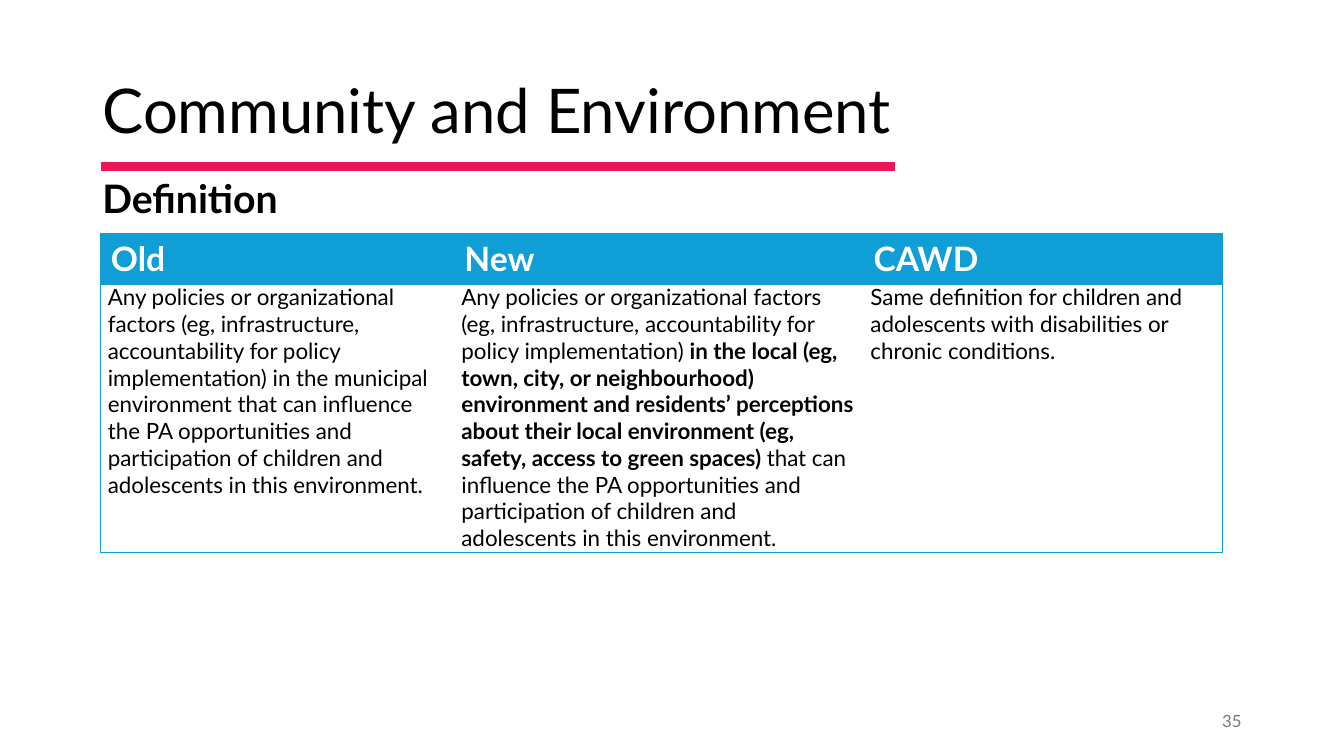
import pptx
import pptx.dml.color
import pptx.enum.shapes
import pptx.enum.text
import pptx.oxml
import pptx.oxml.ns
import pptx.util

COLS, ROWS = 160, 90
WIDE, HIGH = pptx.util.Inches(13.33), pptx.util.Inches(7.5)
HUES = {"ink": "000000", "paper": "FFFFFF", "blue": "0F9ED5", "pink": "EA1656", "gray": "797979"}
ALIGN = pptx.enum.text.PP_ALIGN
MID = pptx.enum.text.MSO_ANCHOR.MIDDLE
TOP = pptx.enum.text.MSO_ANCHOR.TOP

HEADS = ["Old", "New", "CAWD"]
START = "Any policies or organizational factors (eg, infrastructure, accountability for policy implementation) "
END = "that can influence the PA opportunities and participation of children and adolescents in this environment."
BODY = [
    [(START + "in the municipal environment " + END, False)],
    [
        (START, False),
        ("in the local (eg, town, city, or neighbourhood) environment and residents’ perceptions "
         "about their local environment (eg, safety, access to green spaces) ", True),
        (END, False),
    ],
    [("Same definition for children and adolescents with disabilities or chronic conditions.", False)],
]


def across(n):
    return round(WIDE * n / COLS)


def down(n):
    return round(HIGH * n / ROWS)


def place(x, y, w, h):
    return across(x), down(y), across(w), down(h)


def color(name):
    return pptx.dml.color.RGBColor.from_string(HUES[name])


def write(frame, parts, size=16, hue="ink", align=ALIGN.LEFT, anchor=TOP, space=1.0):
    frame.word_wrap = True
    frame.vertical_anchor = anchor
    para = frame.paragraphs[0]
    para.alignment = align
    para.line_spacing = space
    for text, bold in parts:
        run = para.add_run()
        run.text = text
        run.font.name = "Lato"
        run.font.size = pptx.util.Pt(size)
        run.font.bold = bold
        run.font.color.rgb = color(hue)


def label(slide, area, text, bold=False, **style):
    box = slide.shapes.add_textbox(*place(*area))
    write(box.text_frame, [(text, bold)], **style)


def title(slide, area, text, **style):
    head = slide.shapes.title
    head.left, head.top, head.width, head.height = place(*area)
    write(head.text_frame, [(text, False)], **style)


def rule(slide, x, y, end):
    line = slide.shapes.add_connector(
        pptx.enum.shapes.MSO_CONNECTOR.STRAIGHT, across(x), down(y), across(end), down(y))
    line.line.color.rgb = color("pink")
    line.line.width = pptx.util.Pt(6)
    pptx.oxml.ns.qn("a:effectLst")
    line._element.spPr.append(pptx.oxml.parse_xml(
        f'<a:effectLst {pptx.oxml.ns.nsdecls("a")}/>'))


def border(cell, sides):
    props = cell._tc.get_or_add_tcPr()
    for side in "LRTB":
        fill = f'<a:solidFill><a:srgbClr val="{HUES["blue"]}"/></a:solidFill>' if side in sides else "<a:noFill/>"
        props.append(pptx.oxml.parse_xml(
            f'<a:ln{side} {pptx.oxml.ns.nsdecls("a")} w="12700">{fill}</a:ln{side}>'))


def paint(cell, sides, hue):
    border(cell, sides)
    cell.fill.solid()
    cell.fill.fore_color.rgb = color(hue)


def grid(slide, x, y, widths, heights):
    area = place(x, y, sum(widths), sum(heights))
    table = slide.shapes.add_table(len(heights), len(widths), *area).table
    table.horz_banding = False
    for row, high in zip(table.rows, heights):
        row.height = down(high)
    for i, wide in enumerate(widths):
        table.columns[i].width = across(wide)
        edge = {0: "L", len(widths) - 1: "R"}.get(i, "")
        top, low = table.cell(0, i), table.cell(1, i)
        paint(top, edge + "TB", "blue")
        write(top.text_frame, [(HEADS[i], True)], size=24, hue="paper")
        paint(low, edge + "TB", "paper")
        low.margin_left = low.margin_right = pptx.util.Inches(0.07)
        low.margin_top = low.margin_bottom = 0
        write(low.text_frame, BODY[i])


def main():
    deck = pptx.Presentation()
    deck.slide_width, deck.slide_height = WIDE, HIGH
    slide = deck.slides.add_slide(deck.slide_layouts[5])
    title(slide, (11, 4.8, 138, 17.4), "Community and Environment", size=44, anchor=MID, space=0.9)
    label(slide, (113, 83.4, 36, 4.8), "35", size=12, hue="gray", align=ALIGN.RIGHT, anchor=MID)
    rule(slide, 12, 19.8, 106.5)
    label(slide, (11, 20.2, 33.7, 6.8), "Definition", bold=True, size=28)
    grid(slide, 12, 27.8, [42.1, 48.7, 42.7], [5.6, 31.9])
    deck.save("out.pptx")


if __name__ == "__main__":
    main()
